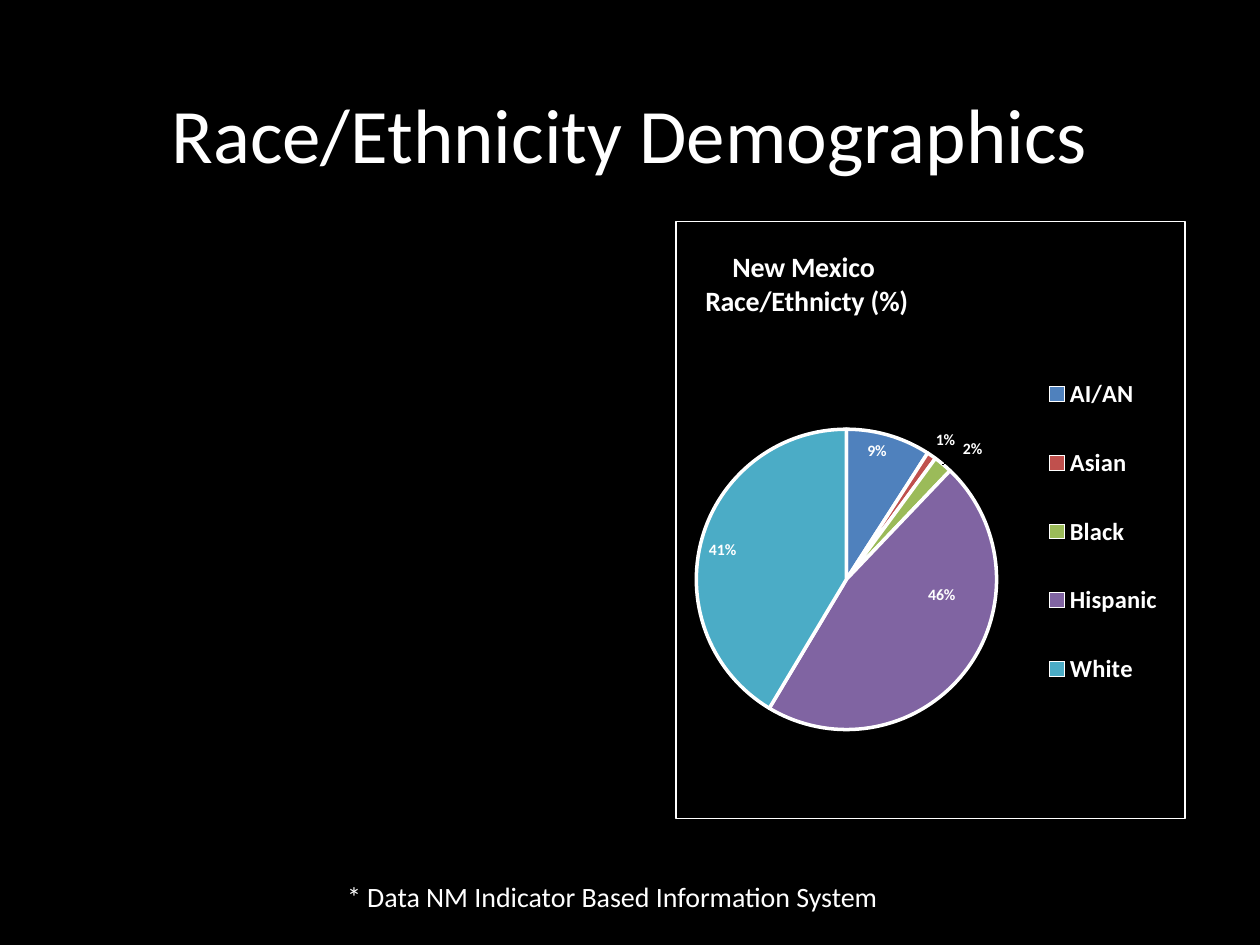
"""Build the race and ethnicity demographics slide with its pie chart."""
from lxml import etree
from pptx import Presentation
from pptx.chart.data import CategoryChartData
from pptx.dml.color import RGBColor
from pptx.enum.chart import XL_CHART_TYPE, XL_LABEL_POSITION, XL_LEGEND_POSITION
from pptx.enum.text import MSO_ANCHOR, PP_ALIGN
from pptx.oxml import parse_xml
from pptx.oxml.ns import nsdecls, qn
from pptx.util import Inches, Pt

PIE, RIGHT = XL_CHART_TYPE.PIE, XL_LEGEND_POSITION.RIGHT
INSIDE, OUTSIDE = XL_LABEL_POSITION.INSIDE_END, XL_LABEL_POSITION.OUTSIDE_END
CENTER = XL_LABEL_POSITION.CENTER
CENTERED, MIDDLE = PP_ALIGN.CENTER, MSO_ANCHOR.MIDDLE

COLORS = {"back": "000000", "text": "FFFFFF", "AI/AN": "4F81BD", "Asian": "C0504D",
          "Black": "9BBB59", "Hispanic": "8064A2", "White": "4BACC6"}
TITLE = "Race/Ethnicity Demographics"
FOOTNOTE = "* Data NM Indicator Based Information System"
CHART_TITLE = ["New Mexico ", "Race/Ethnicty (%)"]
GROUPS = [
    ("AI/AN", 9, INSIDE, None),
    ("Asian", 1, OUTSIDE, None),
    ("Black", 2, OUTSIDE, (0.03, 0)),
    ("Hispanic", 46, CENTER, (0.07, -0.05)),
    ("White", 41, INSIDE, None),
]
BOXES = {"title": (0.75, 0.25, 8.5, 1.61), "chart": (5.36, 1.75, 4.05, 4.75),
         "footnote": (1.34, 6.93, 7.04, 0.37)}
SHARES = {"title": (0.05, 0.04), "plot": (0.04, 0.33, 0.59, 0.54),
          "legend": (0.71, 0.2, 0.26, 0.64)}


def rgb(name):
    return RGBColor.from_string(COLORS[name])


def style(font, size, bold=False):
    for key, value in {"name": "Calibri", "size": Pt(size), "bold": bold}.items():
        setattr(font, key, value)
    font.color.rgb = rgb("text")


def inches(name):
    return [Inches(value) for value in BOXES[name]]


def manual_layout(shares, inner=False, edge=True):
    layout = parse_xml(f"<c:layout {nsdecls('c')}><c:manualLayout/></c:layout>")
    settings = [("layoutTarget", "inner")] if inner else []
    settings += [("xMode", "edge"), ("yMode", "edge")] if edge else []
    settings += zip("xywh", shares)
    for tag, value in settings:
        etree.SubElement(layout[0], qn(f"c:{tag}")).set("val", str(value))
    return layout


def place(parent, layout, after=None):
    for old in parent.findall(qn("c:layout")):
        parent.remove(old)
    if after:
        parent.find(qn(after)).addnext(layout)
    else:
        parent.insert(0, layout)


def write(frame, lines, size, bold=False):
    for number, line in enumerate(lines):
        paragraph = frame.add_paragraph() if number else frame.paragraphs[0]
        paragraph.alignment = CENTERED
        run = paragraph.add_run()
        run.text = line
        style(run.font, size, bold)


def add_pie(slide):
    data = CategoryChartData()
    data.categories = [group[0] for group in GROUPS]
    data.add_series("Series 1", [group[1] for group in GROUPS])
    chart = slide.shapes.add_chart(PIE, *inches("chart"), data).chart
    style(chart.font, 10)
    space = chart.font._element.getparent().getparent().getparent().getparent()
    space.find(qn("c:chart")).addnext(parse_xml(
        f"<c:spPr {nsdecls('c', 'a')}>"
        f"<a:solidFill><a:srgbClr val='{COLORS['back']}'/></a:solidFill>"
        f"<a:ln w='{Pt(0.75)}'><a:solidFill><a:srgbClr val='{COLORS['text']}'/>"
        "</a:solidFill></a:ln></c:spPr>"))

    write(chart.chart_title.text_frame, CHART_TITLE, 16, True)
    chart.has_legend = True
    chart.legend.position = RIGHT
    chart.legend.include_in_layout = False
    style(chart.legend.font, 14, True)
    area = space.find(qn("c:chart"))
    place(area.find(qn("c:title")), manual_layout(SHARES["title"]), "c:tx")
    place(area.find(qn("c:plotArea")), manual_layout(SHARES["plot"], inner=True))
    place(area.find(qn("c:legend")), manual_layout(SHARES["legend"]), "c:legendPos")

    plot = chart.plots[0]
    plot.vary_by_categories = True
    series = plot.series[0]
    labels = series.data_labels
    labels.show_percentage, labels.show_value = True, False
    style(labels.font, 9, True)
    for number, (group, _, position, shift) in enumerate(GROUPS):
        point = series.points[number]
        point.format.fill.solid()
        point.format.fill.fore_color.rgb = rgb(group)
        point.format.line.color.rgb = rgb("text")
        point.format.line.width = Pt(2)
        point.data_label.position = position
        style(point.data_label.font, 9, True)
        label = labels._element.findall(qn("c:dLbl"))[number]
        label.find(qn("c:showVal")).set("val", "0")
        label.find(qn("c:showPercent")).set("val", "1")
        if shift:
            place(label, manual_layout(shift, edge=False), "c:idx")


def main():
    deck = Presentation()
    deck.slide_width, deck.slide_height = Inches(10), Inches(7.5)
    slide = deck.slides.add_slide(deck.slide_layouts[5])
    slide.background.fill.solid()
    slide.background.fill.fore_color.rgb = rgb("back")

    title = slide.shapes.title
    title.left, title.top, title.width, title.height = inches("title")
    title.text_frame.vertical_anchor = MIDDLE
    write(title.text_frame, [TITLE], 44)
    add_pie(slide)
    footnote = slide.shapes.add_textbox(*inches("footnote")).text_frame
    footnote.word_wrap = True
    write(footnote, [FOOTNOTE], 16)
    deck.save("out.pptx")


if __name__ == "__main__":
    main()
